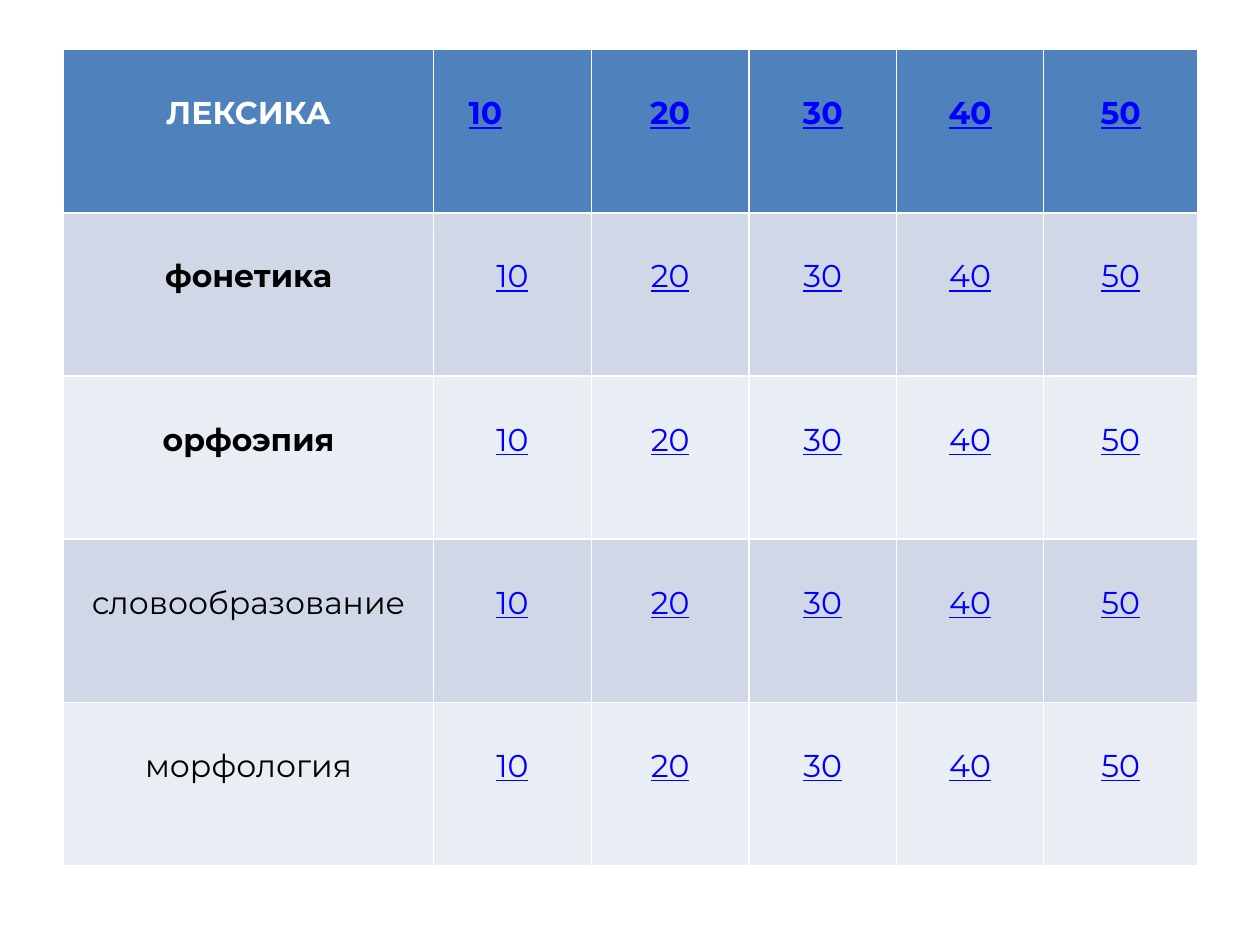
from pptx import Presentation
from pptx.dml.color import RGBColor
from pptx.enum.text import PP_ALIGN
from pptx.util import Cm, Pt

MID = PP_ALIGN.CENTER
HUES = {"head": "4F81BD", "odd": "D0D8E8", "even": "E9EDF4",
        "white": "FFFFFF", "black": "000000", "link": "0000FF"}
TOPICS = ["ЛЕКСИКА", "фонетика", "орфоэпия", "словообразование", "морфология"]
POINTS = ["10", "20", "30", "40", "50"]
WIDTHS = [7.46, 3.18, 3.18, 2.97, 2.97, 3.1]
HIGH = 3.29

deck = Presentation()
deck.slide_width, deck.slide_height = Cm(25.4), Cm(19.05)
slide = deck.slides.add_slide(deck.slide_layouts[6])
grid = slide.shapes.add_table(
    len(TOPICS), len(WIDTHS), Cm(1.28), Cm(1),
    Cm(sum(WIDTHS)), Cm(HIGH * len(TOPICS))).table
for col, wide in zip(grid.columns, WIDTHS):
    col.width = Cm(wide)

for r, topic in enumerate(TOPICS):
    grid.rows[r].height = Cm(HIGH)
    shade = "head" if r == 0 else "odd" if r % 2 else "even"
    for c, text in enumerate([topic] + POINTS):
        cell = grid.cell(r, c)
        cell.fill.solid()
        cell.fill.fore_color.rgb = RGBColor.from_string(HUES[shade])
        cell.margin_top = Cm(0.9)
        para = cell.text_frame.paragraphs[0]
        para.alignment = MID
        run = para.add_run()
        run.text = text
        look = {"name": "Montserrat", "size": Pt(18), "underline": c > 0,
                "bold": r == 0 or (c == 0 and r < 3)}
        for key, val in look.items():
            setattr(run.font, key, val)
        tone = "link" if c else "black" if r else "white"
        run.font.color.rgb = RGBColor.from_string(HUES[tone])

grid.cell(0, 1).margin_right = Cm(1.34)
deck.save("out.pptx")
